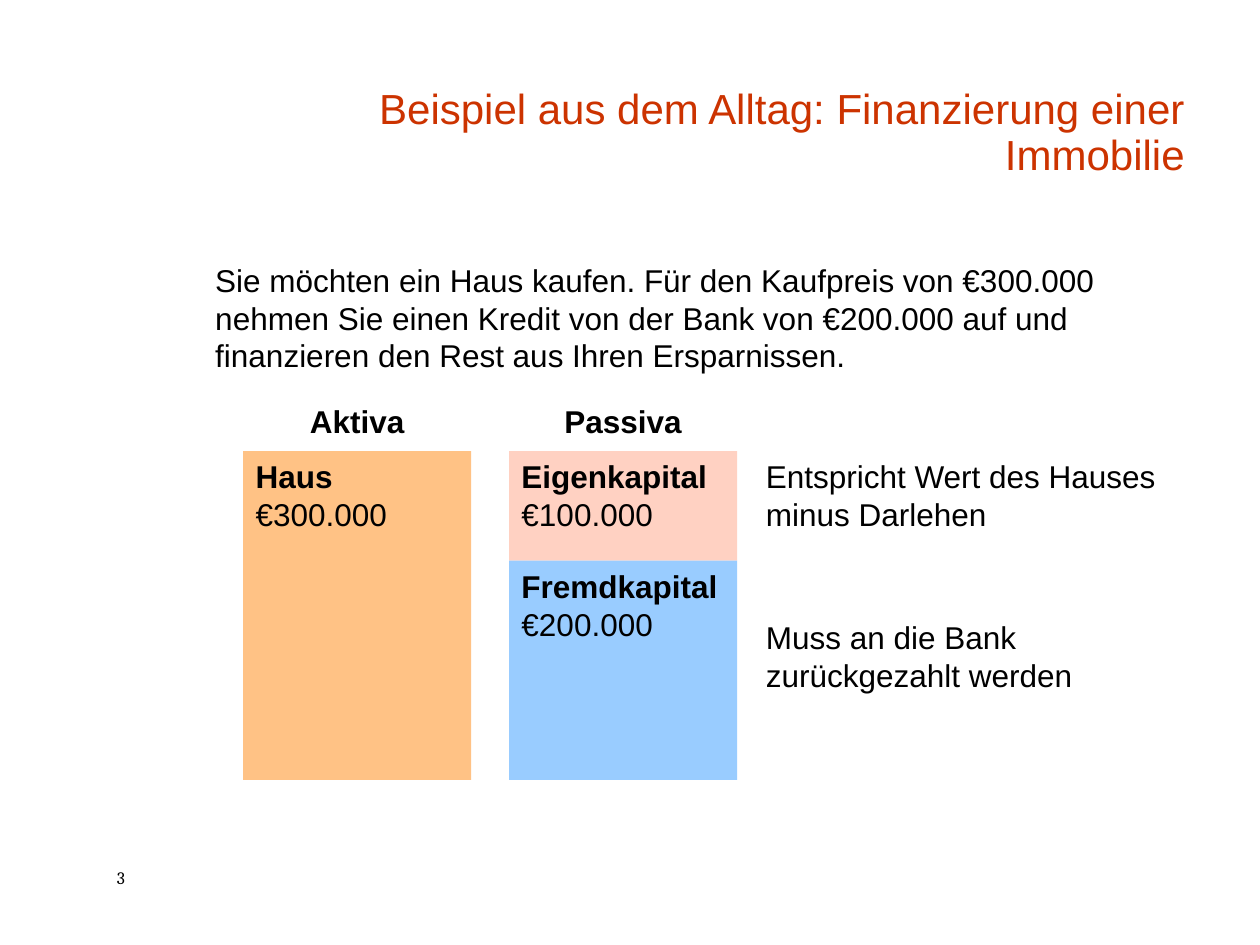
from pptx import Presentation
from pptx.dml.color import RGBColor
from pptx.enum.shapes import MSO_SHAPE
from pptx.enum.text import MSO_ANCHOR, PP_ALIGN
from pptx.util import Inches, Pt

RECT = MSO_SHAPE.RECTANGLE
TOP, BOTTOM = MSO_ANCHOR.TOP, MSO_ANCHOR.BOTTOM
LEFT, MID, RIGHT = PP_ALIGN.LEFT, PP_ALIGN.CENTER, PP_ALIGN.RIGHT

TITLE = "Beispiel aus dem Alltag: Finanzierung einer Immobilie"
INTRO = ("Sie möchten ein Haus kaufen. Für den Kaufpreis von €300.000 "
         "nehmen Sie einen Kredit von der Bank von €200.000 auf und "
         "finanzieren den Rest aus Ihren Ersparnissen.")
SHEET = [
    ("Aktiva", [("Haus", 300, "asset")]),
    ("Passiva", [("Eigenkapital", 100, "equity"),
                 ("Fremdkapital", 200, "debt")]),
]
NOTES = [
    ("Entspricht Wert des Hauses minus Darlehen", 3.58),
    ("Muss an die Bank zurückgezahlt werden", 4.86),
]
PAGE = "3"

THEME = {
    "font": "Arial", "serif": "Cambria",
    "head": 24, "body": 18, "small": 10,
    "title": "CC3300", "ink": "000000",
    "asset": "FFC285", "equity": "FFD1C2", "debt": "99CCFF",
}
WIDE, HIGH = 10, 7.5
COLS = [1.93, 4.04]
SIDE = 5.98
BAR = 1.81
LABEL, BASE = 3.14, 6.19
SCALE = 2.61 / 300


def color(key):
    return RGBColor.from_string(THEME[key])


def write(shape, lines, size="body", ink="ink", font="font",
          align=LEFT, anchor=TOP, space=None):
    frame = shape.text_frame
    frame.word_wrap = True
    frame.vertical_anchor = anchor
    for i, (text, bold) in enumerate(lines):
        para = frame.add_paragraph() if i else frame.paragraphs[0]
        para.alignment = align
        para.line_spacing = space
        run = para.add_run()
        run.text = text
        run.font.name = THEME[font]
        run.font.size = Pt(THEME[size])
        run.font.bold = bold
        run.font.color.rgb = color(ink)


def label(slide, place, text, bold=False, **style):
    box = slide.shapes.add_textbox(*map(Inches, place))
    write(box, [(text, bold)], **style)


def block(slide, place, name, worth, fill):
    shape = slide.shapes.add_shape(RECT, *map(Inches, place))
    shape.shadow.inherit = False
    shape.fill.solid()
    shape.fill.fore_color.rgb = color(fill)
    shape.line.fill.background()
    write(shape, [(name, True), (f"€{worth}.000", False)])


def main():
    deck = Presentation()
    deck.slide_width, deck.slide_height = Inches(WIDE), Inches(HIGH)
    slide = deck.slides.add_slide(deck.slide_layouts[6])

    label(slide, (0.83, 6.83, 0.67, 0.27), PAGE, size="small", font="serif")
    label(slide, (2.09, 0.42, 7.41, 1.05), TITLE, size="head", ink="title",
          align=RIGHT, anchor=BOTTOM, space=0.9)
    label(slide, (1.61, 2.02, 7.58, 4.82), INTRO)

    for left, (head, parts) in zip(COLS, SHEET):
        label(slide, (left, LABEL, BAR, 0.44), head, bold=True, align=MID)
        top = BASE - SCALE * sum(worth for _, worth, _ in parts)
        for name, worth, fill in parts:
            tall = SCALE * worth
            block(slide, (left, top, BAR, tall), name, worth, fill)
            top += tall

    for text, top in NOTES:
        label(slide, (SIDE, top, WIDE - 0.5 - SIDE, 0.77), text)

    deck.save("out.pptx")


if __name__ == "__main__":
    main()
